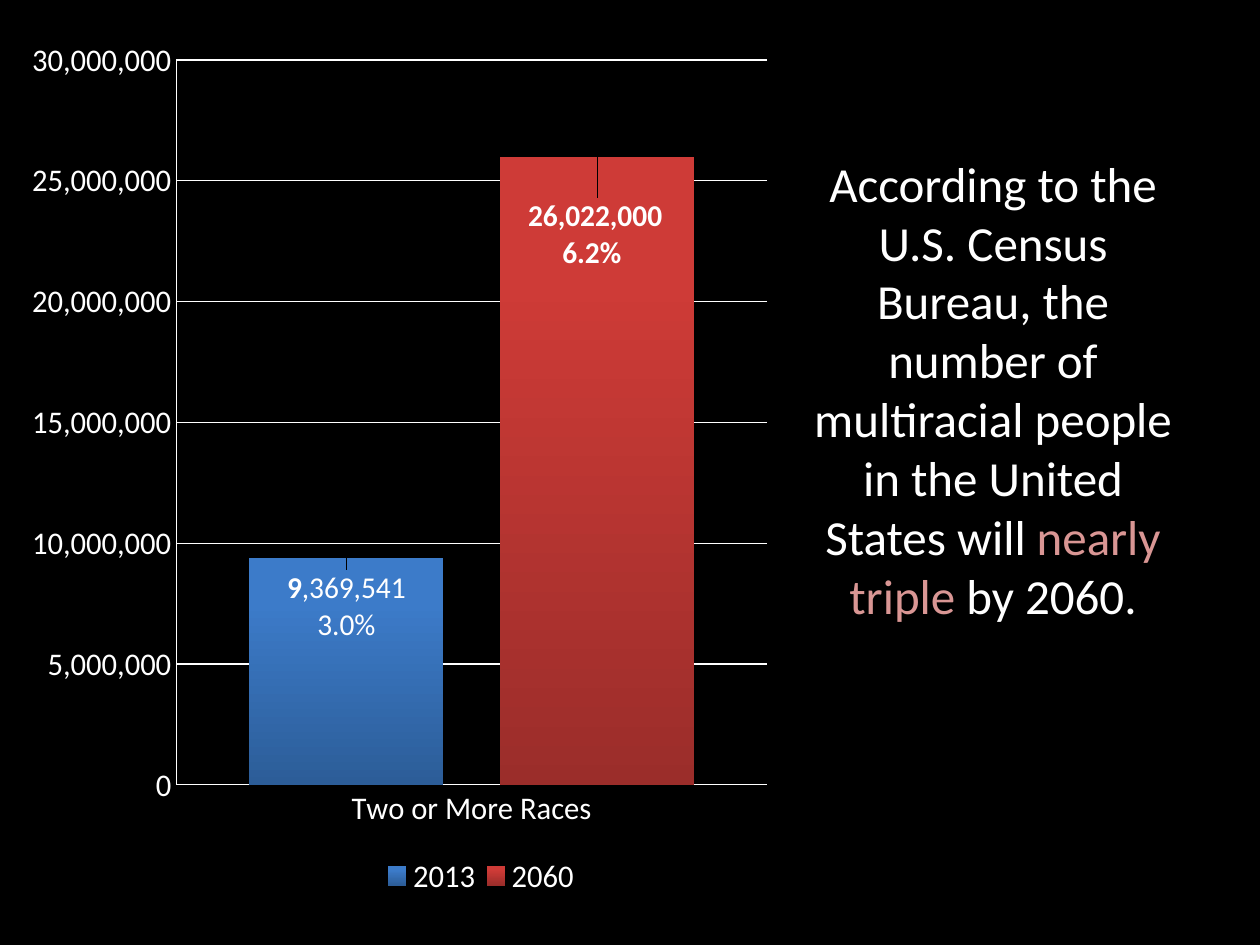
import pptx
import pptx.util
import pptx.chart.data
import pptx.dml.color
import pptx.enum.chart
import pptx.enum.text
import pptx.oxml

RGBColor = pptx.dml.color.RGBColor
BLACK = RGBColor(0x00, 0x00, 0x00)
WHITE = RGBColor(0xFF, 0xFF, 0xFF)
PINK = RGBColor(0xD9, 0x96, 0x94)
BLUE_TOP = RGBColor(0x3C, 0x7B, 0xC9)
BLUE_BOTTOM = RGBColor(0x2C, 0x5D, 0x98)
RED_TOP = RGBColor(0xCE, 0x3B, 0x37)
RED_BOTTOM = RGBColor(0x9B, 0x2D, 0x2A)

FONT = "Calibri"
PX_PER_INCH = 126
SLIDE_SIZE = (1260, 945)
CHART_BOX = (32, 32, 746, 882)
PLOT_BOX = (159, 60, 608, 725)
LEGEND_BOX = (365, 854, 215, 44)
STATEMENT_BOX = (788, 147, 410, 488)

CATEGORY = "Two or More Races"
SERIES = [
    {"name": "2013", "value": 9400000, "fill": (BLUE_TOP, BLUE_BOTTOM), "shift": (0, 7),
     "label": [[("9", True), (",369,541", False)], [("3.0%", False)]]},
    {"name": "2060", "value": 26000000, "fill": (RED_TOP, RED_BOTTOM), "shift": (-2, 36),
     "label": [[("26,022,000", True)], [("6.2% ", True)]]},
]
STATEMENT = [
    ("According to the U.S. Census Bureau, the number of multiracial people in the United States will ", WHITE),
    ("nearly triple", PINK),
    (" by 2060.", WHITE),
]


def px(length):
    return pptx.util.Emu(round(length * 914400 / PX_PER_INCH))


def style_font(font, size, color, bold=False):
    font.name = FONT
    font.size = pptx.util.Pt(size)
    font.color.rgb = color
    font.bold = bold


def style_line(line):
    line.color.rgb = WHITE
    line.width = pptx.util.Pt(0.75)


def chart_xml(tag, content):
    namespace = "http://schemas.openxmlformats.org/drawingml/2006/chart"
    return pptx.oxml.parse_xml(f'<c:{tag} xmlns:c="{namespace}">{content}</c:{tag}>')


def manual_layout(lengths, modes=""):
    sizes = CHART_BOX[2:] * 2
    parts = "".join(f'<c:{key} val="{length / size:.4f}"/>'
                    for key, length, size in zip("xywh", lengths, sizes))
    return chart_xml("layout", f"<c:manualLayout>{modes}{parts}</c:manualLayout>")


def place(element, box, index, target=""):
    for layout in element.xpath("c:layout"):
        element.remove(layout)
    left, top, width, height = box
    modes = target + '<c:xMode val="edge"/><c:yMode val="edge"/>'
    lengths = (left - CHART_BOX[0], top - CHART_BOX[1], width, height)
    element.insert(index, manual_layout(lengths, modes))


def add_label(point, lines, shift):
    label = point.data_label
    frame = label.text_frame
    for index, line in enumerate(lines):
        paragraph = frame.add_paragraph() if index else frame.paragraphs[0]
        for text, bold in line:
            run = paragraph.add_run()
            run.text = text
            style_font(run.font, 17.3, WHITE, bold)
    label.position = pptx.enum.chart.XL_LABEL_POSITION.INSIDE_END
    label_element = frame._txBody.getparent().getparent()
    label_element.insert(1, manual_layout(shift))
    labels = label_element.getparent()
    for leader in labels.xpath("c:showLeaderLines"):
        labels.remove(leader)
    extension = ('<c:ext uri="{CE6537A1-D6FC-4f65-9D91-7224C49458BB}" '
                 'xmlns:c15="http://schemas.microsoft.com/office/drawing/2012/chart">'
                 '<c15:showLeaderLines val="0"/></c:ext>')
    labels.append(chart_xml("extLst", extension))


def add_population_chart(slide):
    data = pptx.chart.data.CategoryChartData(number_format="#,##0")
    data.categories = [CATEGORY]
    for entry in SERIES:
        data.add_series(entry["name"], [entry["value"]])
    chart = slide.shapes.add_chart(
        pptx.enum.chart.XL_CHART_TYPE.COLUMN_CLUSTERED, *map(px, CHART_BOX), data).chart
    style_font(chart.font, 18, WHITE)
    chart.has_title = False
    chart.has_legend = True
    chart.legend.position = pptx.enum.chart.XL_LEGEND_POSITION.BOTTOM
    chart.legend.include_in_layout = False

    for axis in (chart.category_axis, chart.value_axis):
        axis.major_tick_mark = pptx.enum.chart.XL_TICK_MARK.NONE
        style_line(axis.format.line)
    value_axis = chart.value_axis
    value_axis.minimum_scale = 0
    value_axis.maximum_scale = 30000000
    value_axis.major_unit = 5000000
    value_axis.has_major_gridlines = True
    style_line(value_axis.major_gridlines.format.line)
    value_axis.tick_labels.number_format = "#,##0"
    value_axis.tick_labels.number_format_is_linked = False

    plot = chart.plots[0]
    plot.gap_width = 75
    plot.overlap = -29
    plot.vary_by_categories = False
    for series, entry in zip(plot.series, SERIES):
        fill = series.format.fill
        fill.gradient()
        fill.gradient_angle = 270
        for stop, color, position in zip(fill.gradient_stops, entry["fill"], (0.2, 1)):
            stop.color.rgb = color
            stop.position = position
        add_label(series.points[0], entry["label"], entry["shift"])

    chart_element = chart._chartSpace.chart
    place(chart_element.plotArea, PLOT_BOX, 0, '<c:layoutTarget val="inner"/>')
    place(chart_element.xpath("c:legend")[0], LEGEND_BOX, 1)


def add_statement(slide):
    frame = slide.shapes.add_textbox(*map(px, STATEMENT_BOX)).text_frame
    frame.word_wrap = True
    frame.auto_size = pptx.enum.text.MSO_AUTO_SIZE.SHAPE_TO_FIT_TEXT
    paragraph = frame.paragraphs[0]
    paragraph.alignment = pptx.enum.text.PP_ALIGN.CENTER
    for text, color in STATEMENT:
        run = paragraph.add_run()
        run.text = text
        style_font(run.font, 28, color)


def main():
    presentation = pptx.Presentation()
    presentation.slide_width, presentation.slide_height = map(px, SLIDE_SIZE)
    slide = presentation.slides.add_slide(presentation.slide_layouts[6])
    slide.background.fill.solid()
    slide.background.fill.fore_color.rgb = BLACK
    add_population_chart(slide)
    add_statement(slide)
    presentation.save("out.pptx")


if __name__ == "__main__":
    main()
